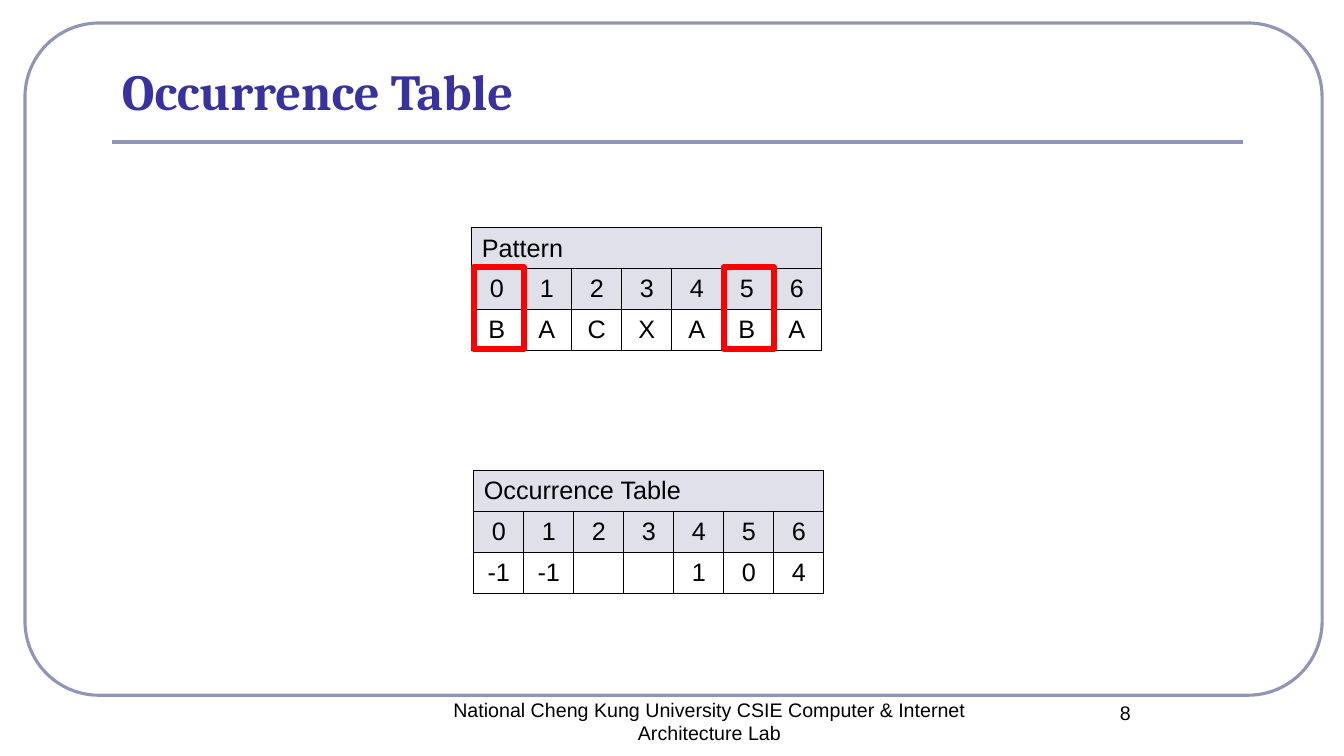
from lxml import etree
from pptx import Presentation
from pptx.dml.color import RGBColor
from pptx.enum.shapes import MSO_CONNECTOR, MSO_SHAPE
from pptx.enum.text import MSO_ANCHOR, PP_ALIGN
from pptx.oxml.ns import qn
from pptx.util import Cm, Pt

ROUNDED, RECTANGLE = MSO_SHAPE.ROUNDED_RECTANGLE, MSO_SHAPE.RECTANGLE
STRAIGHT = MSO_CONNECTOR.STRAIGHT
LEFT, CENTER = PP_ALIGN.LEFT, PP_ALIGN.CENTER
MIDDLE, BOTTOM = MSO_ANCHOR.MIDDLE, MSO_ANCHOR.BOTTOM

TITLE = "Occurrence Table"
# text, left, top, width, height in cm
FOOTERS = [
    ("National Cheng Kung University CSIE Computer & Internet Architecture Lab",
     10.54, 17.45, 14.68, 1.27),
    ("8", 25.4, 17.53, 5.92, 1.27),
]
# heading, values, left, top in cm
TABLES = [
    ("Pattern", ["B", "A", "C", "X", "A", "B", "A"], 11.89, 5.74),
    ("Occurrence Table", ["-1", "-1", "", "", "1", "0", "4"], 11.94, 11.86),
]
MARKED_COLUMNS = [5, 0]
MARK_LEFT, MARK_TOP = 11.94, 6.73
COLUMN_WIDTH, ROW_HEIGHT = 1.26, 1.03

FRAME, INK, TITLE_INK = "9094B8", "000000", "3732A0"
HEADER_FILL, MARK = "E0E0EB", "FF0000"


def paint(target, color):
    """Give a fill one solid colour."""
    target.solid()
    target.fore_color.rgb = RGBColor.from_string(color)


def set_text(para, text, size, color=INK, name="Arial", bold=False, align=LEFT):
    para.text = text
    para.alignment = align
    para.font.size = Pt(size)
    para.font.name = name
    para.font.bold = bold
    paint(para.font.fill, color)


def add_outline(slide, kind, box, color, weight):
    shape = slide.shapes.add_shape(kind, *map(Cm, box))
    shape.shadow.inherit = False
    shape.fill.background()
    paint(shape.line.fill, color)
    shape.line.width = Pt(weight)
    return shape


def add_borders(cell):
    properties = cell._tc.get_or_add_tcPr()
    for position, side in enumerate(("a:lnL", "a:lnR", "a:lnT", "a:lnB")):
        line = etree.Element(qn(side), w=str(Pt(1)))
        fill = etree.SubElement(line, qn("a:solidFill"))
        etree.SubElement(fill, qn("a:srgbClr"), val=INK)
        properties.insert(position, line)


def add_index_table(slide, heading, values, left, top):
    """Add a heading row, a row of indexes and a row of values."""
    count = len(values)
    rows = [[heading] + [""] * (count - 1), [str(i) for i in range(count)], values]
    frame = slide.shapes.add_table(
        len(rows), count, Cm(left), Cm(top),
        Cm(COLUMN_WIDTH * count), Cm(ROW_HEIGHT * len(rows)))
    table = frame.table
    for column in table.columns:
        column.width = Cm(COLUMN_WIDTH)
    for r, texts in enumerate(rows):
        table.rows[r].height = Cm(ROW_HEIGHT)
        for c, text in enumerate(texts):
            cell = table.cell(r, c)
            cell.vertical_anchor = MIDDLE
            if r < 2:
                paint(cell.fill, HEADER_FILL)
            else:
                cell.fill.background()
            add_borders(cell)
            set_text(cell.text_frame.paragraphs[0], text, 18,
                     align=CENTER if r else LEFT)
    table.cell(0, 0).merge(table.cell(0, count - 1))


def main():
    deck = Presentation()
    deck.slide_width, deck.slide_height = Cm(33.87), Cm(19.05)
    slide = deck.slides.add_slide(deck.slide_layouts[5])

    frame = add_outline(slide, ROUNDED, (0.63, 0.58, 32.69, 16.94), FRAME, 2.25)
    frame.adjustments[0] = 0.11
    rule = slide.shapes.add_connector(STRAIGHT, Cm(2.82), Cm(3.58), Cm(31.32), Cm(3.58))
    paint(rule.line.fill, FRAME)
    rule.line.width = Pt(3)
    etree.SubElement(rule._element.spPr, qn("a:effectLst"))

    title = slide.shapes.title
    title.left, title.top, title.width, title.height = map(Cm, (2.82, 1.52, 28.5, 1.65))
    title.text_frame.vertical_anchor = BOTTOM
    set_text(title.text_frame.paragraphs[0], TITLE, 36, TITLE_INK, "Cambria", True)

    for text, *box in FOOTERS:
        footer = slide.shapes.add_textbox(*map(Cm, box))
        footer.text_frame.word_wrap = True
        set_text(footer.text_frame.paragraphs[0], text, 14, align=CENTER)

    for table in TABLES:
        add_index_table(slide, *table)
    for column in MARKED_COLUMNS:
        left = MARK_LEFT + column * COLUMN_WIDTH
        add_outline(slide, RECTANGLE,
                    (left, MARK_TOP, COLUMN_WIDTH, 2 * ROW_HEIGHT), MARK, 4.5)

    deck.save("out.pptx")


if __name__ == "__main__":
    main()
